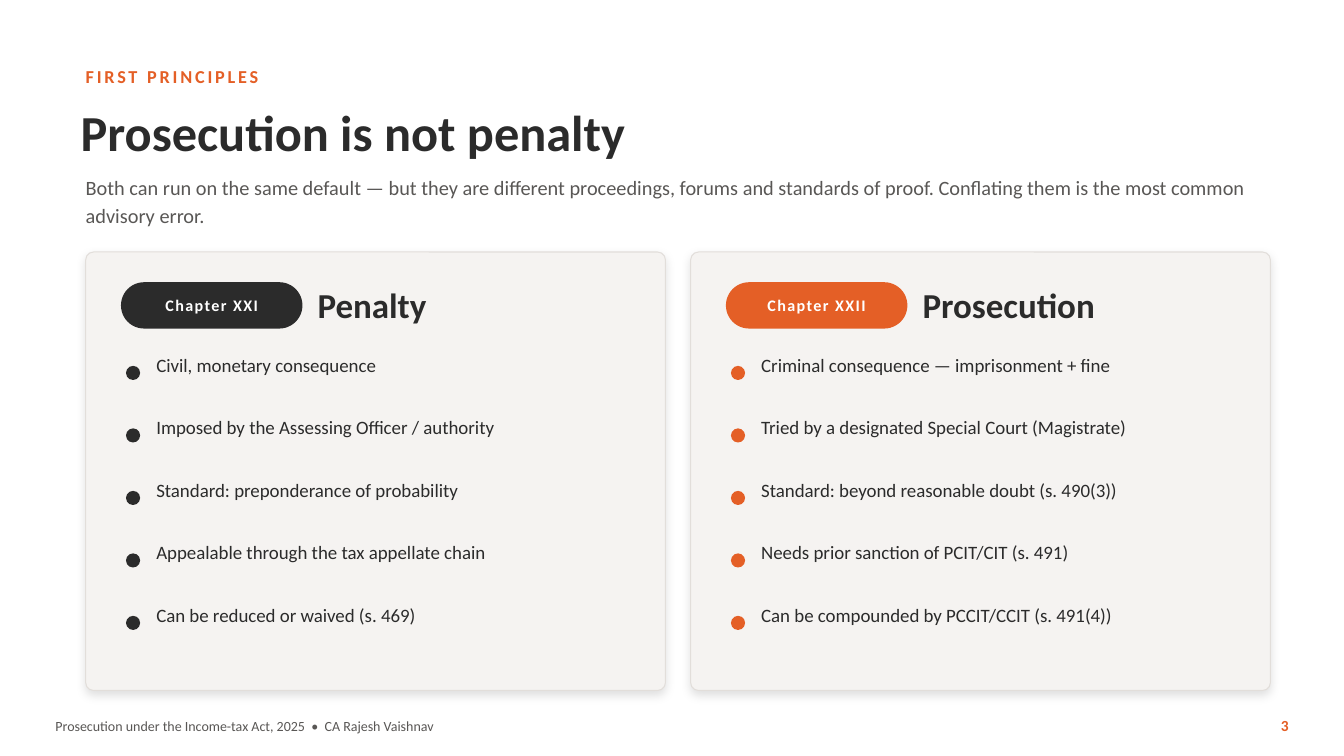
from lxml import etree
from pptx import Presentation, util as u
from pptx.dml.color import RGBColor
from pptx.enum import shapes, text
from pptx.oxml import ns

# Content
KICKER = "FIRST PRINCIPLES"
TITLE = "Prosecution is not penalty"
INTRO = ("Both can run on the same default — but they are different proceedings, forums "
         "and standards of proof. Conflating them is the most common advisory error.")
CARDS = [
    ("Chapter XXI", "Penalty", "ink", [
        "Civil, monetary consequence",
        "Imposed by the Assessing Officer / authority",
        "Standard: preponderance of probability",
        "Appealable through the tax appellate chain",
        "Can be reduced or waived (s. 469)",
    ]),
    ("Chapter XXII", "Prosecution", "orange", [
        "Criminal consequence — imprisonment + fine",
        "Tried by a designated Special Court (Magistrate)",
        "Standard: beyond reasonable doubt (s. 490(3))",
        "Needs prior sanction of PCIT/CIT (s. 491)",
        "Can be compounded by PCCIT/CCIT (s. 491(4))",
    ]),
]
FOOTER = "Prosecution under the Income-tax Act, 2025  •  CA Rajesh Vaishnav"
PAGE = "3"

# Style and layout, 100 px to the inch
COLORS = {"ink": "2B2B2B", "orange": "E45F26", "grey": "595755", "white": "FFFFFF",
          "card": "F5F3F1", "border": "E2DEDA", "shadow": "000000"}
FONT = "Calibri"
PX = u.Inches(1) // 100
CARD_X, CARD_Y, CARD_W, CARD_H, CARD_GAP = 85, 250, 575, 435, 25
ITEM_Y, ITEM_STEP, DOT = 351, 62, 14
LEFT, CENTER, RIGHT = text.PP_ALIGN.LEFT, text.PP_ALIGN.CENTER, text.PP_ALIGN.RIGHT
MIDDLE, TOP = text.MSO_ANCHOR.MIDDLE, text.MSO_ANCHOR.TOP
KIND = shapes.MSO_SHAPE

prs = Presentation()
prs.slide_width, prs.slide_height = 1333 * PX, 750 * PX
s = prs.slides.add_slide(prs.slide_layouts[6])


def rgb(name):
    return RGBColor.from_string(COLORS[name])


def box(x, y, w, h):
    return [v * PX for v in (x, y, w, h)]


def write(sp, words, size, color, bold=False, align=LEFT, anchor=MIDDLE,
          leading=None, tracking=0):
    tf = sp.text_frame
    tf.word_wrap = True
    tf.vertical_anchor = anchor
    tf.margin_left = tf.margin_top = tf.margin_right = tf.margin_bottom = 0
    tf.text = words
    p = tf.paragraphs[0]
    p.alignment = align
    if leading:
        p.line_spacing = u.Pt(leading)
    r = p.runs[0]
    r.font.name, r.font.size, r.font.bold = FONT, u.Pt(size), bold
    r.font.color.rgb = rgb(color)
    if tracking:
        r.font._element.set("spc", str(tracking * 100))


def label(x, y, w, h, *args, **kwargs):
    write(s.shapes.add_textbox(*box(x, y, w, h)), *args, **kwargs)


def shape(kind, x, y, w, h, fill, corner=None):
    sp = s.shapes.add_shape(kind, *box(x, y, w, h))
    sp.shadow.inherit = False
    sp.fill.solid()
    sp.fill.fore_color.rgb = rgb(fill)
    sp.line.fill.background()
    if corner is not None:
        sp.adjustments[0] = corner
    return sp


def add_shadow(sp, blur, distance, opacity):
    effects = sp._element.spPr.find(ns.qn("a:effectLst"))
    shadow = etree.SubElement(effects, ns.qn("a:outerShdw"), blurRad=str(u.Pt(blur)),
                              dist=str(u.Pt(distance)), dir="5400000",
                              algn="ctr", rotWithShape="0")
    color = etree.SubElement(shadow, ns.qn("a:srgbClr"), val=COLORS["shadow"])
    etree.SubElement(color, ns.qn("a:alpha"), val=str(opacity * 1000))


# Heading
label(85, 60, 1100, 32, KICKER, 13, "orange", bold=True, tracking=2)
label(80, 95, 1100, 70, TITLE, 36, "ink", bold=True)
label(85, 168, 1160, 60, INTRO, 14.5, "grey", leading=20)

# Comparison cards
for col, (chapter, heading, accent, items) in enumerate(CARDS):
    x = CARD_X + col * (CARD_W + CARD_GAP)
    card = shape(KIND.ROUNDED_RECTANGLE, x, CARD_Y, CARD_W, CARD_H, "card", 0.018)
    card.line.color.rgb = rgb("border")
    card.line.width = u.Pt(0.75)
    add_shadow(card, blur=7, distance=3, opacity=13)

    pill = shape(KIND.ROUNDED_RECTANGLE, x + 35, CARD_Y + 30, 180, 46, accent, 0.5)
    write(pill, chapter, 11.5, "white", bold=True, align=CENTER, tracking=1)
    label(x + 230, CARD_Y + 26, 330, 52, heading, 25, "ink", bold=True)

    for row, item in enumerate(items):
        y = ITEM_Y + row * ITEM_STEP
        shape(KIND.OVAL, x + 40, y + 12, DOT, DOT, accent)
        label(x + 70, y, 485, 50, item, 13.5, "ink", anchor=TOP, leading=16)

# Footer
label(55, 705, 900, 30, FOOTER, 10, "grey")
label(1233, 705, 45, 30, PAGE, 11, "orange", bold=True, align=RIGHT)

prs.save("out.pptx")
